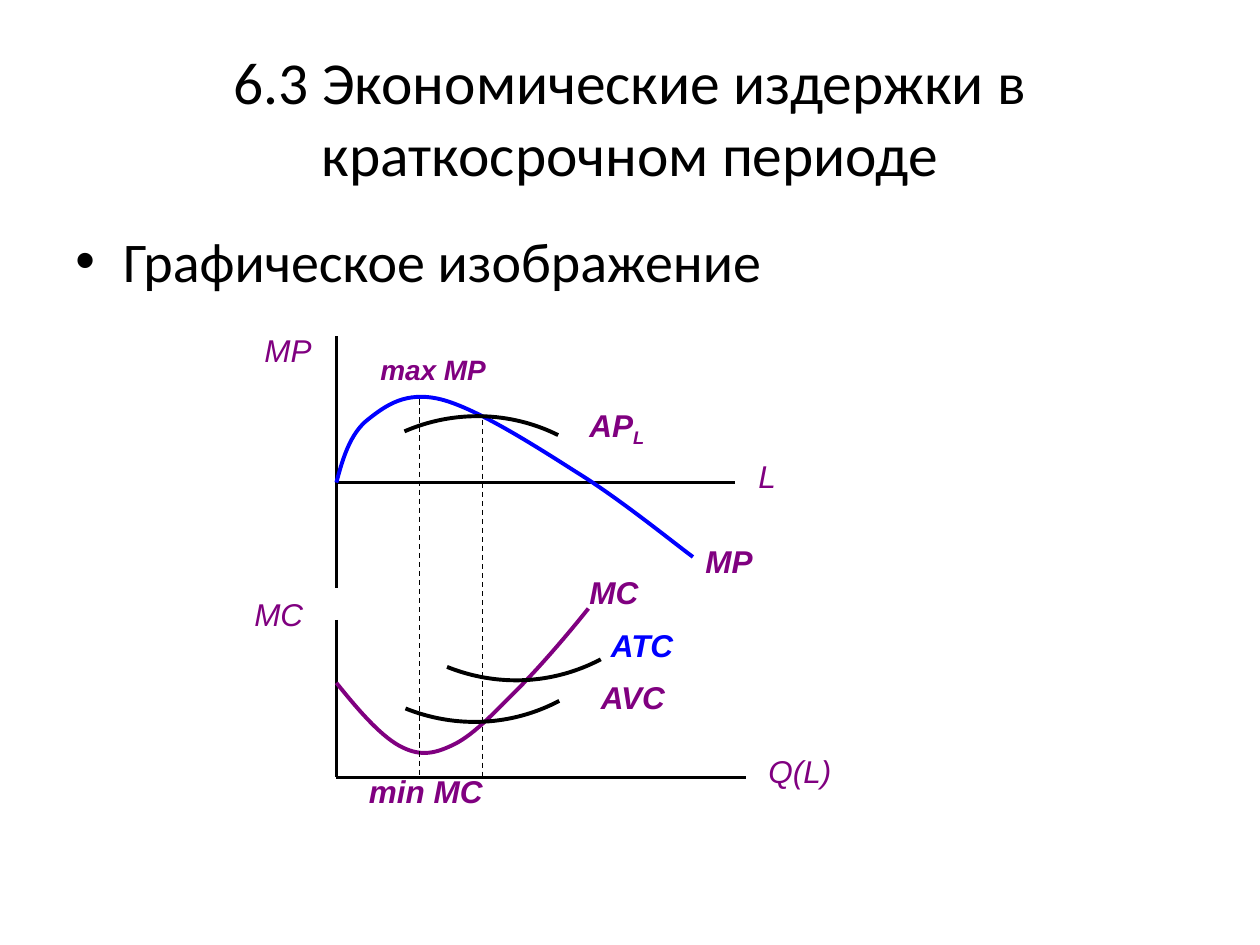
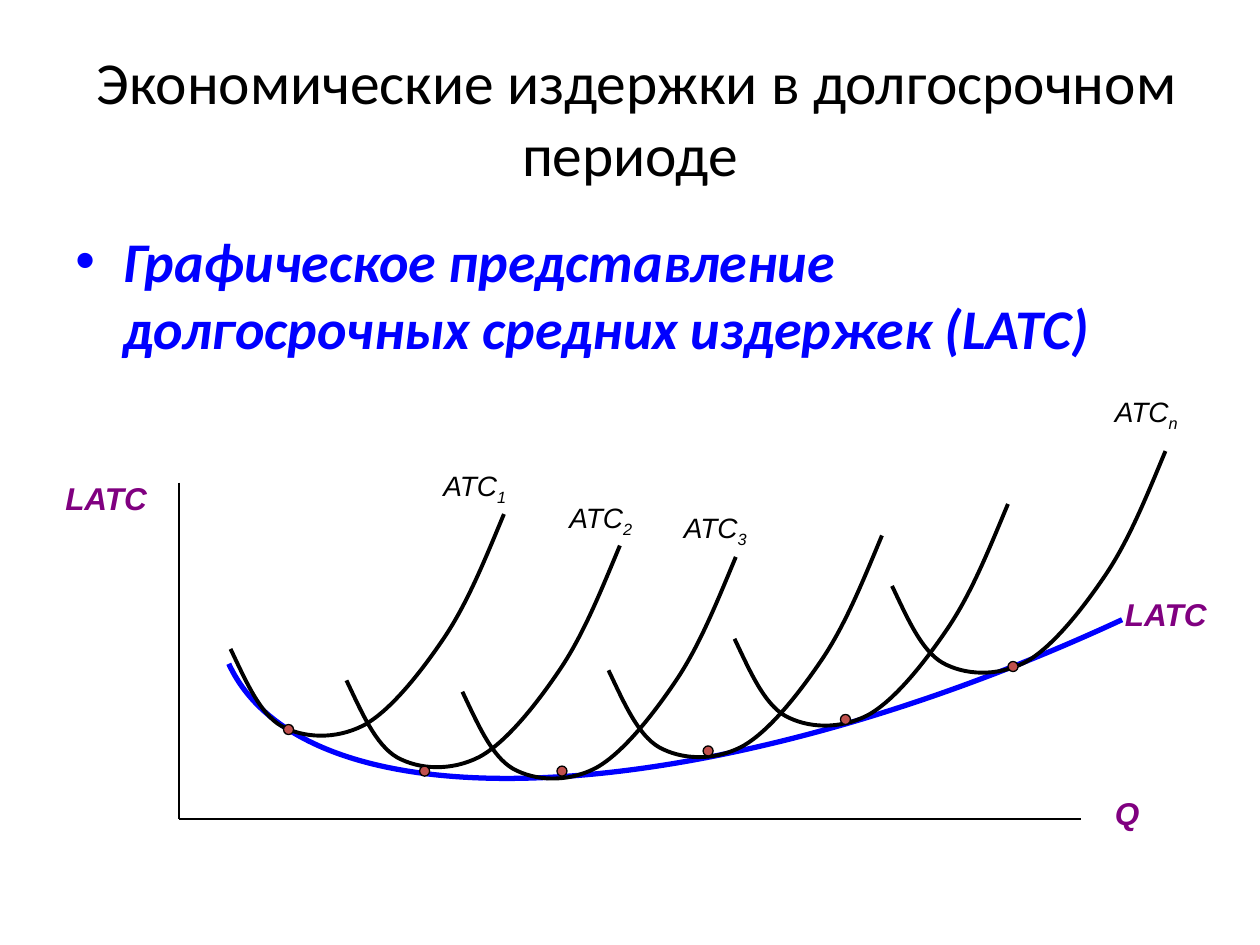
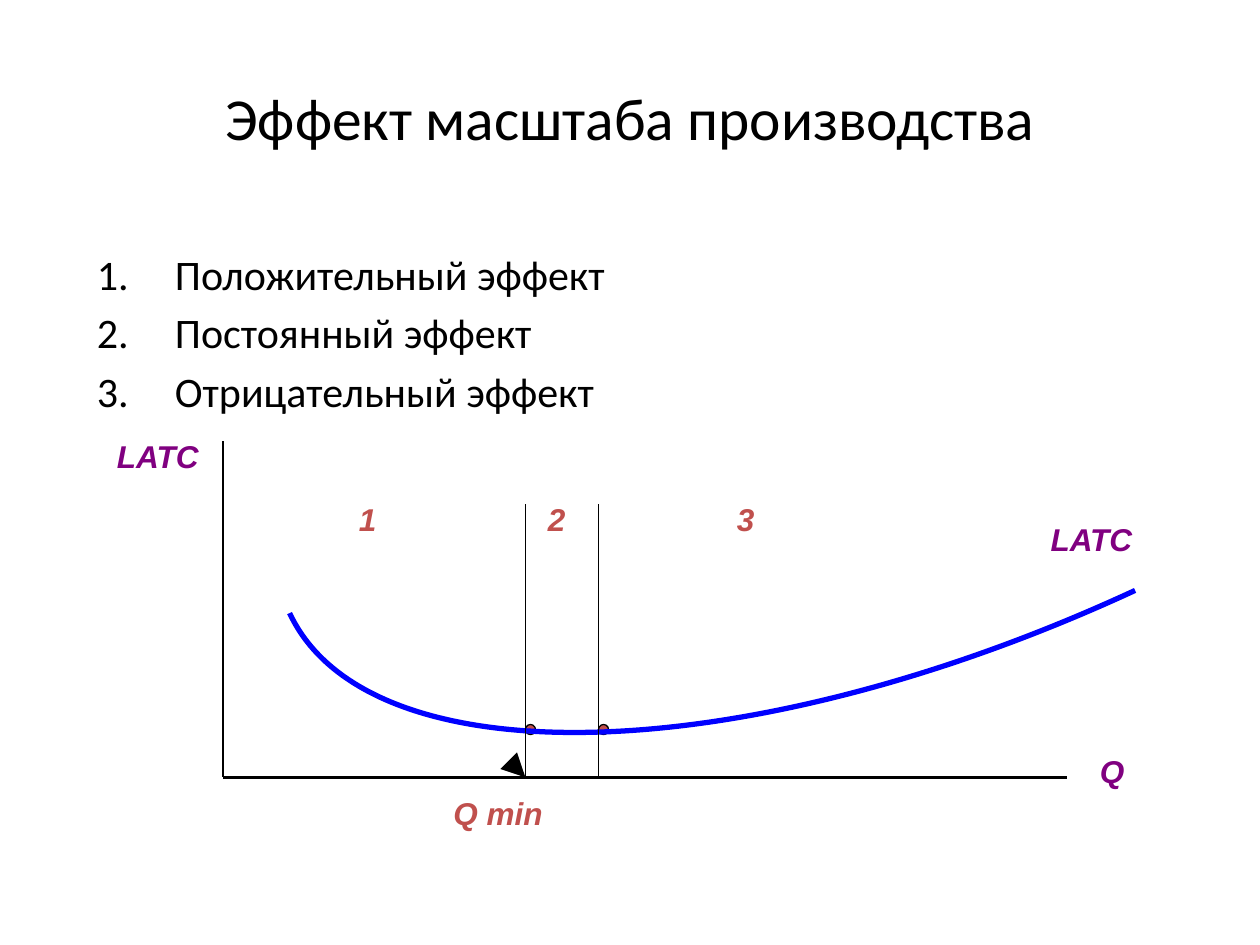
from copy import deepcopy
from dataclasses import dataclass
from math import cos, radians, sin

from lxml.etree import SubElement
from pptx import Presentation
from pptx.dml.color import RGBColor as RGB
from pptx.enum.dml import MSO_LINE as DASH
from pptx.enum.shapes import MSO_CONNECTOR as LINK, MSO_SHAPE as SHAPE
from pptx.enum.text import MSO_ANCHOR as ANCHOR, MSO_AUTO_SIZE as FIT, PP_ALIGN as ALIGN
from pptx.oxml.ns import qn
from pptx.util import Cm, Pt


@dataclass(frozen=True)
class Theme:
    """Colours, fonts, type sizes and line weights shared by the slides."""
    ink: str = "000000"
    blue: str = "0000FF"
    purple: str = "800080"
    red: str = "C0504D"
    text_font: str = "Calibri"
    label_font: str = "Arial"
    title: int = 34
    body: int = 32
    numbered: int = 24
    label: int = 18
    small: int = 16
    hair: float = 0.75
    axis: float = 1.5
    curve: float = 2.25
    bold_curve: float = 3
    arrow: float = 4.5


T = Theme()
HEAVY = {"bold": True, "italic": True}
LIGHT = {"italic": True}


def inch(v):
    """Return a length on the inch grid, given through Cm."""
    return Cm(v * 2.54)


def apply(obj, values):
    """Set each named attribute of an object."""
    for name, value in values.items():
        setattr(obj, name, value)


def shift(points, dx, dy):
    """Move points by an offset."""
    return [(x + dx, y + dy) for x, y in points]


def turn(points, center, degrees):
    """Rotate points clockwise about a centre."""
    (cx, cy), a = center, radians(degrees)
    return [(cx + x * cos(a) - y * sin(a), cy + x * sin(a) + y * cos(a))
            for x, y in shift(points, -cx, -cy)]


def trace(geo, sp, points, hub=None):
    """Write cubic segments into a geometry, closed through a hub if given."""
    for child in list(geo):
        geo.remove(child)
    steps = [("a:moveTo", points[:1])]
    steps += [("a:cubicBezTo", points[i:i + 3]) for i in range(1, len(points), 3)]
    if hub:
        steps += [("a:lnTo", [hub]), ("a:close", [])]
    for tag, pts in steps:
        node = SubElement(geo, qn(tag))
        for x, y in pts:
            SubElement(node, qn("a:pt"), x=str(inch(x) - sp.left), y=str(inch(y) - sp.top))


class Deck:
    """Draws styled elements on the current slide."""

    def __init__(self, prs, theme):
        """Keep the presentation and its theme."""
        self.prs, self.theme, self.s = prs, theme, None

    def slide(self, title):
        """Start a blank slide with a centred title."""
        self.s = self.prs.slides.add_slide(self.prs.slide_layouts[6])
        tf = self.frame(0.5, 0.3, 9, 1.25)
        tf.vertical_anchor = ANCHOR.MIDDLE
        tf.paragraphs[0].alignment = ALIGN.CENTER
        self.run(tf.paragraphs[0], title, self.theme.title, self.theme.ink, self.theme.text_font)

    def frame(self, *box):
        """Add a wrapping text box and return its text frame."""
        tf = self.s.shapes.add_textbox(*map(inch, box)).text_frame
        tf.word_wrap = True
        return tf

    def run(self, p, text, size, color, font, style=None):
        """Add a formatted run."""
        r = p.add_run()
        r.text = text
        apply(r.font, {"name": font, "size": Pt(size), **(style or {})})
        r.font.color.rgb = RGB.from_string(color)
        return r

    def bullets(self, box, items, size, indent, color=T.ink, style=None, numbered=False):
        """Add a bulleted or numbered list."""
        tf = self.frame(*box)
        for i, text in enumerate(items):
            p = tf.add_paragraph() if i else tf.paragraphs[0]
            p.space_before = Pt(size * 0.2)
            pPr = p._p.get_or_add_pPr()
            pPr.set("marL", str(inch(indent)))
            pPr.set("indent", str(-inch(indent)))
            if numbered:
                SubElement(pPr, qn("a:buFont"), typeface="+mj-lt")
                SubElement(pPr, qn("a:buAutoNum"), type="arabicPeriod")
            else:
                SubElement(pPr, qn("a:buFont"), typeface=self.theme.label_font)
                SubElement(pPr, qn("a:buChar"), char="•")
            self.run(p, text, size, color, self.theme.text_font, style)

    def label(self, x, y, w, text, color=T.purple, style=HEAVY, size=T.label, sub=""):
        """Add a graph label, with a subscript if given."""
        tf = self.frame(x, y, w, 0.4 if size == self.theme.label else 0.37)
        tf.auto_size = FIT.SHAPE_TO_FIT_TEXT
        p = tf.paragraphs[0]
        self.run(p, text, size, color, self.theme.label_font, style)
        if sub:
            r = self.run(p, sub, size, color, self.theme.label_font, style)
            r._r.get_or_add_rPr().set("baseline", "-25000")

    def outline(self, sp, color, width):
        """Set the line of a shape."""
        sp.line.color.rgb = RGB.from_string(color)
        sp.line.width = Pt(width)

    def line(self, x1, y1, x2, y2, width=T.axis, dash=None, arrow=False):
        """Add a straight line."""
        sp = self.s.shapes.add_connector(LINK.STRAIGHT, *map(inch, (x1, y1, x2, y2)))
        self.outline(sp, self.theme.ink, width)
        if dash:
            sp.line.dash_style = dash
        if arrow:
            SubElement(sp.line._get_or_add_ln(), qn("a:tailEnd"), type="triangle")
        SubElement(sp._element.spPr, qn("a:effectLst"))

    def axes(self, x, top, y, right):
        """Add a vertical and a horizontal axis meeting at the lower left."""
        self.line(x, top, x, y)
        self.line(x, y, right, y)

    def freeform(self, corners, color, width):
        """Add an unfilled outline and return it with its geometry."""
        start, *rest = [(inch(x), inch(y)) for x, y in corners]
        fb = self.s.shapes.build_freeform(*start)
        fb.add_line_segments(rest, close=False)
        sp = fb.convert_to_shape()
        sp.fill.background()
        sp.shadow.inherit = False
        self.outline(sp, color, width)
        return sp, next(sp._element.iter(qn("a:path")))

    def curve(self, points, color=T.ink, width=T.curve):
        """Add an open curve through cubic segments."""
        sp, geo = self.freeform(points, color, width)
        trace(geo, sp, points)

    def arc(self, points, hub, center, rotation, color=T.ink, width=T.curve):
        """Add a rotated arc with an unstroked sector towards its hub."""
        *local, pivot = turn([*points, hub], center, -rotation)
        sp, geo = self.freeform([local[0], local[-1], pivot], color, width)
        sector = deepcopy(geo)
        geo.addnext(sector)
        trace(geo, sp, local)
        trace(sector, sp, local, pivot)
        geo.set("fill", "none")
        sector.set("stroke", "0")
        sp.rotation = rotation

    def dot(self, x, y):
        """Add a small round marker."""
        sp = self.s.shapes.add_shape(SHAPE.OVAL, *map(inch, (x, y, 0.08, 0.08)))
        sp.shadow.inherit = False
        sp.fill.solid()
        sp.fill.fore_color.rgb = RGB.from_string(self.theme.red)
        self.outline(sp, self.theme.ink, self.theme.hair)


def short_run(d):
    """Draw product and cost curves in the short run."""
    d.slide("6.3 Экономические издержки в краткосрочном периоде")
    d.bullets((0.5, 1.75, 9, 4.95), ["Графическое изображение"], T.body, 0.38)
    d.line(2.67, 2.67, 2.67, 4.67)
    d.line(2.67, 3.83, 5.83, 3.83)
    d.axes(2.67, 4.92, 6.17, 5.92)
    d.curve([(2.67, 3.83), (2.72, 3.64), (2.78, 3.44), (2.92, 3.33), (3.06, 3.22),
             (3.22, 3.1), (3.5, 3.17), (3.78, 3.24), (4.25, 3.54), (4.58, 3.75),
             (4.92, 3.96), (5.35, 4.31), (5.5, 4.42)], T.blue)
    d.curve([(2.67, 5.42), (2.84, 5.63), (3.01, 5.83), (3.17, 5.92), (3.32, 6),
             (3.43, 5.99), (3.58, 5.92), (3.74, 5.85), (3.9, 5.68), (4.08, 5.5),
             (4.26, 5.32), (4.47, 5.08), (4.67, 4.83)], T.purple)
    for x, top in ((3.33, 3.17), (3.83, 3.33)):
        d.line(x, top, x, 6.17, T.hair, DASH.DASH)
    d.arc([(3.21, 3.43), (3.6, 3.26), (4.05, 3.27), (4.43, 3.46)],
          (3.78, 4.81), (3.83, 3.82), 317.7)
    cost = [(4.43, 5.54), (4.05, 5.74), (3.61, 5.76), (3.21, 5.6), (3.76, 4.2), (3.8, 5.2)]
    for dx, dy in ((0, 0), (0.33, -0.33)):
        *points, hub, center = shift(cost, dx, dy)
        d.arc(points, hub, center, 133.5)
    for x, y, w, text in ((2, 2.58, 0.58, "MP"), (1.92, 4.67, 0.67, "MC"),
                          (5.92, 3.58, 0.67, "L"), (6, 5.92, 0.83, "Q(L)")):
        d.label(x, y, w, text, style=LIGHT)
    for x, y, w, text in ((2.83, 6.08, 1.25, "min MC"), (4.67, 5.33, 1, "AVC"),
                          (4.58, 4.5, 0.75, "MC"), (5.5, 4.25, 0.67, "MP")):
        d.label(x, y, w, text)
    d.label(2.92, 2.75, 1.5, "max MP", size=T.small)
    d.label(4.58, 3.17, 0.92, "AP", sub="L")
    d.label(4.75, 4.92, 0.75, "ATC", T.blue)


def long_run(d):
    """Draw the long-run average cost envelope."""
    d.slide(" Экономические издержки в долгосрочном периоде")
    d.bullets((0.5, 1.75, 9, 4.95),
              ["Графическое представление долгосрочных средних издержек (LATC)"],
              T.body, 0.38, T.blue, HEAVY)
    d.arc([(8.92, 4.91), (5.62, 6.44), (2.45, 6.6), (1.83, 5.26)],
          (7.8, 2.49), (5.37, 5.09), 155.1, T.blue, T.bold_curve)
    d.axes(1.42, 3.83, 6.5, 8.58)
    for x, y, w, text in ((8.83, 4.67, 1, "LATC"), (0.42, 3.75, 1, "LATC"), (8.75, 6.25, 0.67, "Q")):
        d.label(x, y, w, text)
    atc = [(0, 1.07), (0.12, 1.32), (0.23, 1.58), (0.4, 1.68), (0.58, 1.78),
           (0.83, 1.79), (1.05, 1.68), (1.26, 1.57), (1.5, 1.27), (1.69, 0.99),
           (1.88, 0.71), (2.02, 0.36), (2.17, 0)]
    for left, top in ((7.08, 3.58), (4.83, 4.25), (2.75, 4.33),
                      (3.67, 4.42), (5.83, 4), (1.83, 4.08)):
        d.curve(shift(atc, left, top))
    for x, y, sub in ((3.42, 3.67, "1"), (4.42, 3.92, "2"), (5.33, 4, "3"), (8.75, 3.08, "n")):
        d.label(x, y, 0.83, "ATC", T.ink, LIGHT, T.small, sub)
    for x, y in ((2.25, 5.75), (3.33, 6.08), (4.42, 6.08), (5.58, 5.92), (6.67, 5.67), (8, 5.25)):
        d.dot(x, y)


def scale_effect(d):
    """Draw the three zones of the scale effect."""
    d.slide("Эффект масштаба производства")
    d.bullets((0.67, 1.92, 8.75, 4.67),
              ["Положительный эффект", "Постоянный эффект", "Отрицательный эффект"],
              T.numbered, 0.62, numbered=True)
    d.axes(1.77, 3.5, 6.17, 8.47)
    bounds = (4.17, 4.75)
    for x in bounds:
        d.dot(x, 5.75)
    d.arc([(9.02, 4.66), (5.93, 6.09), (2.93, 6.17), (2.31, 4.84)],
          (7.89, 2.24), (5.66, 4.76), 155.1, T.blue, T.bold_curve)
    for x in bounds:
        d.line(x, 4, x, 6.17, T.hair)
    for x, y, w, text in ((0.83, 3.42, 0.94, "LATC"), (8.63, 5.92, 0.62, "Q"), (8.24, 4.08, 0.94, "LATC")):
        d.label(x, y, w, text)
    for x, y, w, text in ((2.75, 3.92, 0.83, "1"), (4.25, 3.92, 0.33, "2"),
                          (5.75, 3.92, 1, "3"), (3.5, 6.25, 1.5, "Q min")):
        d.label(x, y, w, text, T.red)
    d.line(4.16, 6.16, 4.17, 6.17, T.arrow, arrow=True)


def main():
    """Build and save the presentation."""
    prs = Presentation()
    apply(prs, {"slide_width": Cm(25.4), "slide_height": Cm(19.05)})
    d = Deck(prs, T)
    for build in (short_run, long_run, scale_effect):
        build(d)
    prs.save("out.pptx")


if __name__ == "__main__":
    main()
